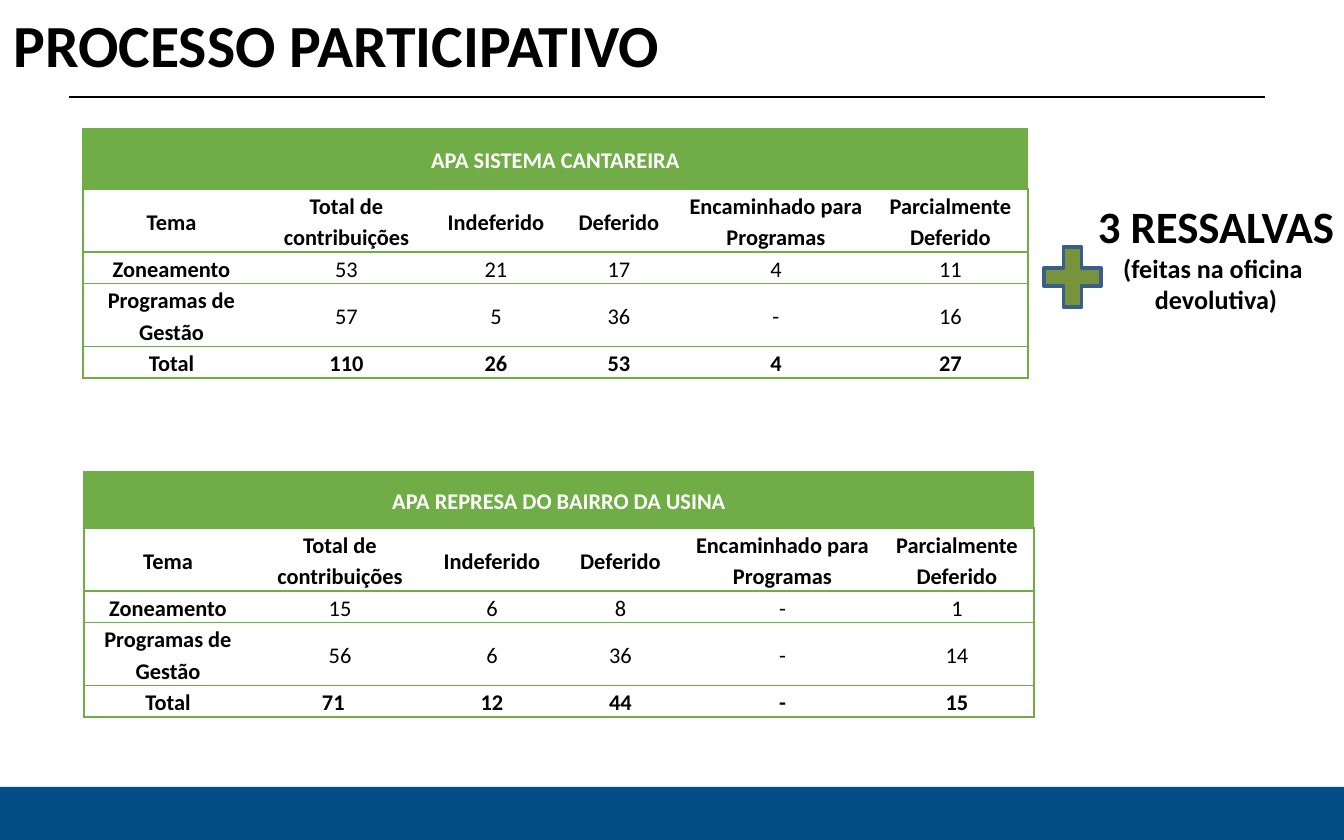
from dataclasses import dataclass

from lxml import etree
from pptx import Presentation
from pptx.dml.color import RGBColor
from pptx.enum.shapes import MSO_CONNECTOR, MSO_SHAPE
from pptx.enum.text import MSO_ANCHOR, MSO_AUTO_SIZE, PP_ALIGN
from pptx.oxml.ns import qn
from pptx.util import Emu, Pt

RECT, PLUS = MSO_SHAPE.RECTANGLE, MSO_SHAPE.MATH_PLUS
LINE = MSO_CONNECTOR.STRAIGHT
LEFT, MID = PP_ALIGN.LEFT, PP_ALIGN.CENTER
CENTER, FIXED = MSO_ANCHOR.MIDDLE, MSO_AUTO_SIZE.NONE
SCALE = 9144000 / 1344
FONT = "Calibri"
GREEN, BLACK, WHITE = "70AD47", "000000", "FFFFFF"
HEADS = ["Tema", "Total de contribuições", "Indeferido", "Deferido",
         "Encaminhado para Programas", "Parcialmente Deferido"]
THEMES = ["Zoneamento", "Programas de Gestão", "Total"]


@dataclass
class Grid:
    title: str
    left: int
    top: int
    cols: list[int]
    head: int
    data: list[list[str]]
    shift: dict[tuple[int, int], int]


GRIDS = [
    Grid("APA SISTEMA CANTAREIRA", 83, 129, [177, 173, 126, 120, 194, 155], 60,
         [["53", "21", "17", "4", "11"],
          ["57", "5", "36", "-", "16"],
          ["110", "26", "53", "4", "27"]], {}),
    Grid("APA REPRESA DO BAIRRO DA USINA", 84, 472, [168, 176, 128, 129, 195, 154], 56,
         [["15", "6", "8", "-", "1"],
          ["56", "6", "36", "-", "14"],
          ["71", "12", "44", "-", "15"]], {(4, 1): 70}),
]


def px(num: int) -> Emu:
    return Emu(round(num * SCALE))


def color(code: str) -> RGBColor:
    return RGBColor.from_string(code)


def write(frame, text: str, size: int = 12, tint: str = BLACK, bold: bool = True,
          align=MID, space: float = 1.0, after: int = 0, first: bool = True) -> None:
    para = frame.paragraphs[0] if first else frame.add_paragraph()
    para.alignment, para.line_spacing = align, space
    para.space_before, para.space_after = Pt(0), Pt(after)
    run = para.add_run()
    run.text = text
    font = run.font
    font.name, font.size, font.bold = FONT, Pt(size), bold
    font.color.rgb = color(tint)


def place(shape, left: int, top: int, width: int, height: int) -> None:
    shape.left, shape.top = px(left), px(top)
    shape.width, shape.height = px(width), px(height)


def border(cell, sides: str) -> None:
    props = cell._tc.get_or_add_tcPr()
    for spot, side in enumerate("LRTB"):
        edge = etree.Element(qn(f"a:ln{side}"), w=str(Pt(1)))
        if side in sides:
            fill = etree.SubElement(edge, qn("a:solidFill"))
            etree.SubElement(fill, qn("a:srgbClr"), val=GREEN)
        else:
            etree.SubElement(edge, qn("a:noFill"))
        props.insert(spot, edge)


def draw_grid(slide, grid: Grid) -> None:
    rows = [grid.head, 63, 31, 63, 31]
    cells = [[grid.title], HEADS]
    cells += [[theme, *vals] for theme, vals in zip(THEMES, grid.data)]
    table = slide.shapes.add_table(
        len(rows), len(HEADS), px(grid.left), px(grid.top),
        px(sum(grid.cols)), px(sum(rows))).table
    table.first_row = table.horz_banding = False
    for col, width in zip(table.columns, grid.cols):
        col.width = px(width)
    for row, height in zip(table.rows, rows):
        row.height = px(height)
    last = len(HEADS) - 1
    for r in range(len(rows)):
        for c in range(len(HEADS)):
            cell = table.cell(r, c)
            if r == 0:
                cell.fill.solid()
                cell.fill.fore_color.rgb = color(GREEN)
            else:
                cell.fill.background()
            border(cell, "TB" + "L" * (c == 0) + "R" * (c == last))
            cell.vertical_anchor = CENTER
            cell.margin_left = px(grid.shift.get((r, c), 9))
            cell.margin_right = px(9)
            cell.margin_top = cell.margin_bottom = 0
            if c < len(cells[r]):
                write(cell.text_frame, cells[r][c], tint=BLACK if r else WHITE,
                      bold=c == 0 or r in (0, 1, 4),
                      align=LEFT if (r, c) in grid.shift else MID,
                      space=1.15, after=6)
    table.cell(0, 0).merge(table.cell(0, last))


def draw_shape(slide, kind, box: tuple[int, int, int, int], fill: str, line: str = "") -> None:
    shape = slide.shapes.add_shape(kind, *map(px, box))
    shape.shadow.inherit = False
    shape.fill.solid()
    shape.fill.fore_color.rgb = color(fill)
    if line:
        shape.line.color.rgb = color(line)
        shape.line.width = Pt(2)
    else:
        shape.line.fill.background()


def draw_rule(slide, left: int, right: int, top: int) -> None:
    rule = slide.shapes.add_connector(LINE, px(left), px(top), px(right), px(top))
    rule.line.color.rgb = color(BLACK)
    rule.line.width = Pt(0.75)
    etree.SubElement(rule._element.spPr, qn("a:effectLst"))


def set_frame(shape):
    frame = shape.text_frame
    frame.word_wrap, frame.auto_size = True, FIXED
    frame.vertical_anchor = CENTER
    return frame


def main() -> None:
    """Build the slide on the participatory process and save it."""
    deck = Presentation()
    deck.slide_width, deck.slide_height = px(1344), px(840)
    slide = deck.slides.add_slide(deck.slide_layouts[5])
    draw_shape(slide, RECT, (0, 787, 1344, 53), "034E84")
    draw_rule(slide, 69, 1265, 97)
    title = slide.shapes.title
    place(title, 0, 3, 1165, 82)
    write(set_frame(title), "PROCESSO PARTICIPATIVO", size=32, align=LEFT)
    for grid in GRIDS:
        draw_grid(slide, grid)
    draw_shape(slide, PLUS, (1034, 236, 77, 82), "77933C", "395E89")
    note = set_frame(slide.shapes.add_textbox(px(1062), px(216), px(308), px(82)))
    write(note, "3 RESSALVAS", size=24)
    for text in ("(feitas na oficina ", "devolutiva)"):
        write(note, text, size=14, first=False)
    deck.save("out.pptx")


if __name__ == "__main__":
    main()
